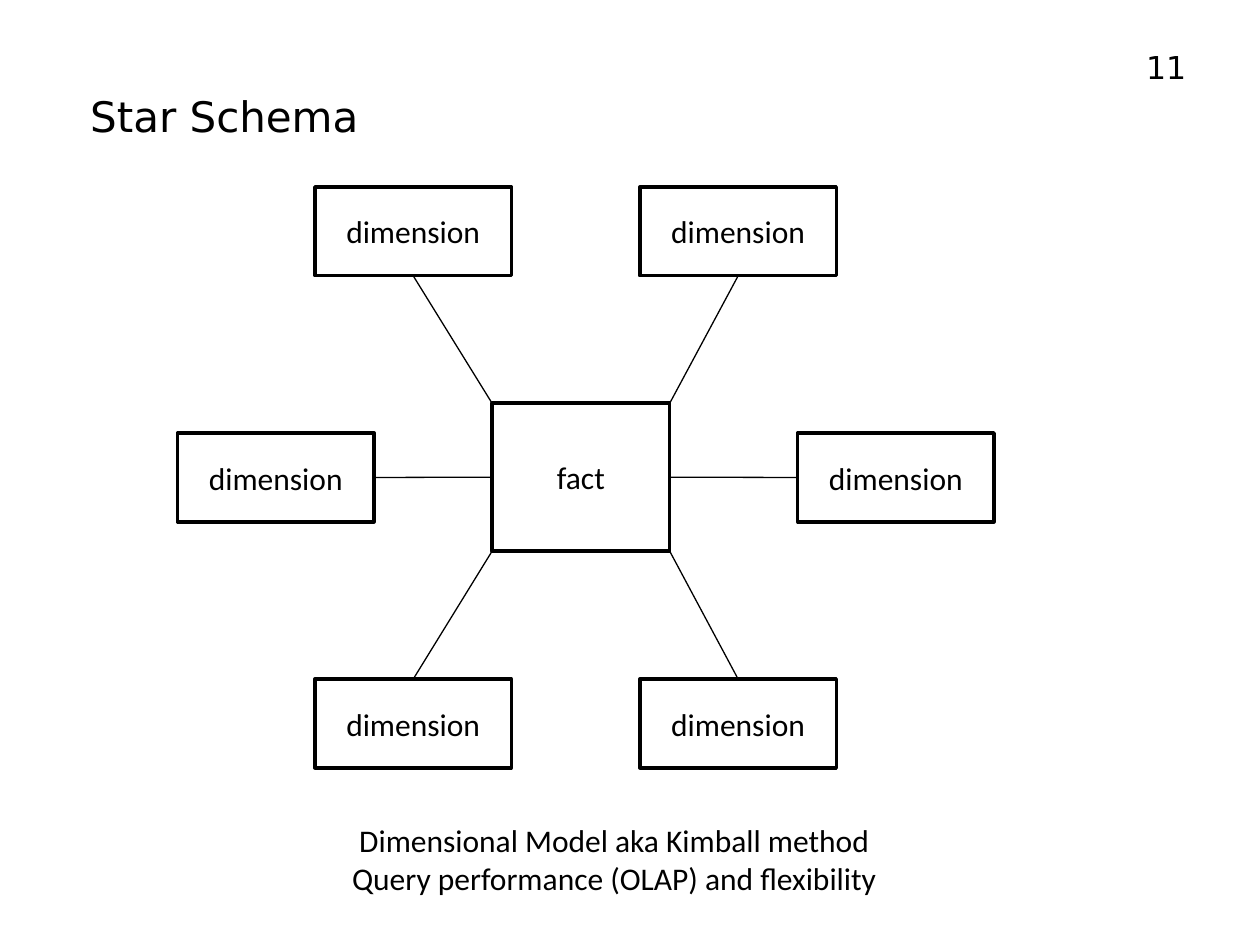
from dataclasses import dataclass

from lxml.etree import SubElement
from pptx import Presentation
from pptx.dml.color import RGBColor
from pptx.enum.shapes import MSO_CONNECTOR, MSO_SHAPE
from pptx.enum.text import MSO_ANCHOR, PP_ALIGN
from pptx.oxml.ns import qn
from pptx.util import Cm, Pt


@dataclass(frozen=True)
class Theme:
    """Colours, fonts and sizes of the deck."""

    ink: RGBColor = RGBColor(0, 0, 0)
    heading_font: str = "DejaVu Sans"
    body_font: str = "Calibri"
    title_size: int = 24
    body_size: int = 18
    box_line: float = 2
    link_line: float = 0.75


class StarPage:
    """Draws text, boxes and links on one page in one theme."""

    def __init__(self, page, theme):
        """Keep the page and its theme."""
        self.page = page
        self.theme = theme

    def fill_frame(self, frame, lines, font, size, align, anchor, spacing=None):
        """Fill a text frame with one paragraph per line."""
        frame.word_wrap = True
        frame.vertical_anchor = anchor
        for index, line in enumerate(lines):
            para = frame.add_paragraph() if index else frame.paragraphs[0]
            para.alignment = align
            para.line_spacing = spacing
            span = para.add_run()
            span.text = line
            span.font.name = font
            span.font.size = Pt(size)
            span.font.color.rgb = self.theme.ink

    def text(self, place, lines, font, size, align, anchor=MSO_ANCHOR.TOP, spacing=None):
        """Add a text box at left, top, width, height in centimetres."""
        box = self.page.shapes.add_textbox(*map(Cm, place))
        self.fill_frame(box.text_frame, lines, font, size, align, anchor, spacing)

    def entity(self, place, label):
        """Add an outlined rectangle with a centred label."""
        box = self.page.shapes.add_shape(MSO_SHAPE.RECTANGLE, *map(Cm, place))
        box.shadow.inherit = False
        box.fill.background()
        box.line.color.rgb = self.theme.ink
        box.line.width = Pt(self.theme.box_line)
        self.fill_frame(box.text_frame, [label], self.theme.body_font, self.theme.body_size,
                        PP_ALIGN.CENTER, MSO_ANCHOR.MIDDLE)
        return box

    def link(self, box, site, target, corner=None, target_site=None):
        """Join a side of a box to a corner or a side of the target."""
        across, down = corner or (0, 0)
        end = target.left + across * target.width, target.top + down * target.height
        line = self.page.shapes.add_connector(MSO_CONNECTOR.STRAIGHT, box.left, box.top, *end)
        line.begin_connect(box, site)
        if target_site is not None:
            line.end_connect(target, target_site)
        line.line.color.rgb = self.theme.ink
        line.line.width = Pt(self.theme.link_line)
        SubElement(line._element.spPr, qn("a:effectLst"))


def main():
    """Build the star schema page and save it."""
    deck = Presentation()
    deck.slide_width, deck.slide_height = Cm(25.4), Cm(19.05)
    theme = Theme()
    star = StarPage(deck.slides.add_slide(deck.slide_layouts[6]), theme)

    star.text((1.57, 1.19, 15.7, 1.8), ["Star Schema"], theme.heading_font,
              theme.title_size, PP_ALIGN.LEFT, spacing=1.5)

    fact = star.entity((9.92, 8.13, 3.58, 2.98), "fact")
    top, row_step, width, height = 3.77, 4.96, 3.96, 1.79
    dimensions = [
        (6.35, 0, 2, {"corner": (0, 0)}),
        (3.58, 1, 3, {"target_site": 1}),
        (12.9, 0, 2, {"corner": (1, 0)}),
        (16.08, 1, 1, {"target_site": 3}),
        (12.9, 2, 0, {"corner": (1, 1)}),
        (6.35, 2, 0, {"corner": (0, 1)}),
    ]
    for left, row, site, goal in dimensions:
        box = star.entity((left, top + row * row_step, width, height), "dimension")
        star.link(box, site, fact, **goal)

    summary = ["Dimensional Model aka Kimball method", "Query performance (OLAP) and flexibility"]
    star.text((5.16, 16.43, 14.45, 1.8), summary, theme.body_font,
              theme.body_size, PP_ALIGN.CENTER)
    star.text((22.1, 0.84, 2.06, 1.02), ["11"], theme.heading_font,
              theme.body_size, PP_ALIGN.RIGHT, MSO_ANCHOR.MIDDLE)
    deck.save("out.pptx")


if __name__ == "__main__":
    main()
